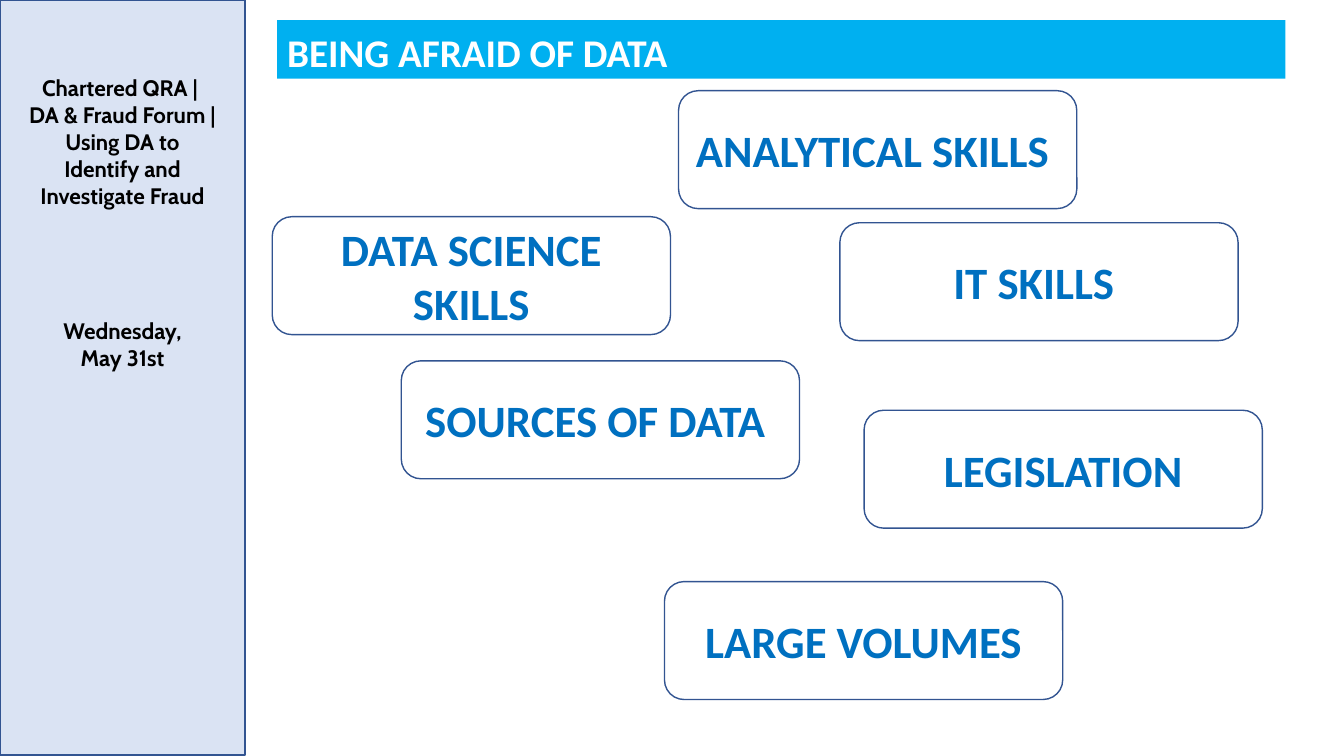
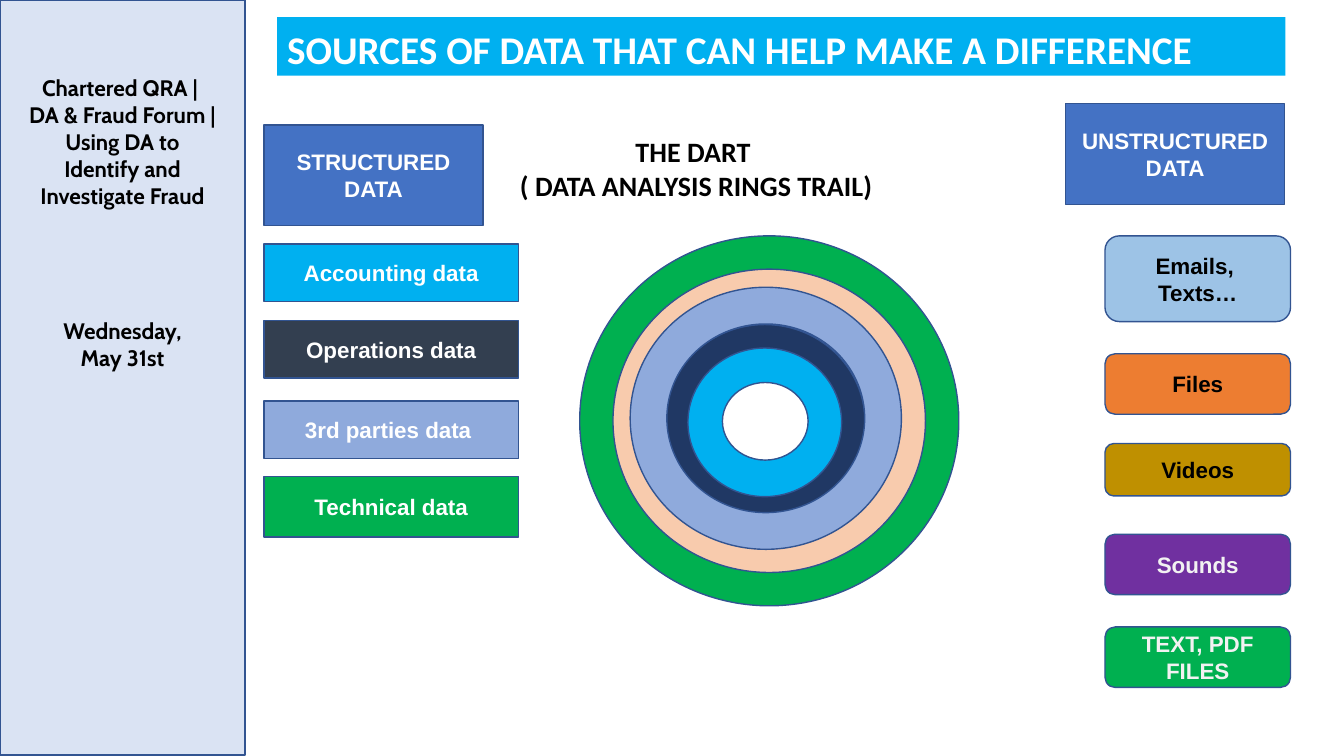
from pptx import Presentation
from pptx.dml.color import RGBColor
from pptx.enum.shapes import MSO_SHAPE
from pptx.enum.text import MSO_ANCHOR, PP_ALIGN
from pptx.util import Inches, Pt

WHITE, BLACK, PALE = "FFFFFF", "000000", "F2F2F2"
SKY, GREEN, BLUE = "00B0F0", "00B050", "4472C4"
EDGE, INK, BAR = "325491", "0070C0", "DAE3F3"
LABEL = ("Arial", 16, WHITE)
SIDE = ("Cabin", 16, BLACK)
SKILL = ("Calibri", 32, INK)
TITLE = ("Calibri", 28, WHITE)
HEAD = ("Calibri", 20, BLACK)

EVENT = ["Chartered QRA | ", "DA & Fraud Forum | Using DA to",
         " Identify and ", "Investigate Fraud"]
DATE = ["Wednesday,", "May 31st"]

# left, top, lines
SKILLS = [
    (8.33, 2.21, ["IT SKILLS "]),
    (2.7, 2.15, ["DATA SCIENCE", "SKILLS"]),
    (6.59, 5.77, ["LARGE VOLUMES"]),
    (8.57, 4.07, ["LEGISLATION"]),
    (3.98, 3.58, ["SOURCES OF DATA "]),
    (6.73, 0.9, ["ANALYTICAL SKILLS "]),
]

# left, top, text
GROUPS = [
    (2.62, 1.24, "STRUCTURED DATA"),
    (10.57, 1.03, "UNSTRUCTURED DATA"),
]

# top, height, fill, text
TABLES = [
    (2.42, 0.57, SKY, "Accounting data"),
    (3.18, 0.57, "333F50", "Operations data"),
    (3.98, 0.57, "8FAADC", "3rd parties data "),
    (4.73, 0.6, GREEN, "Technical data"),
]

# top, height, fill, text colour, lines
MEDIA = [
    (2.34, 0.85, "9DC3E6", BLACK, ["Emails, ", "Texts…"]),
    (3.51, 0.6, "ED7D31", BLACK, ["Files"]),
    (4.4, 0.52, "BF9000", BLACK, ["Videos"]),
    (5.3, 0.6, "7030A0", PALE, ["Sounds"]),
    (6.22, 0.6, GREEN, PALE, ["TEXT, PDF FILES"]),
]

# left, top, width, height, ring thickness, fill
RINGS = [
    (6.78, 3.41, 1.62, 1.54, 0.25, SKY),
    (6.05, 2.61, 3.15, 3.08, 0.09, "F8CBAD"),
    (6.59, 3.22, 1.99, 1.94, 0.12, "203864"),
    (5.75, 2.34, 3.76, 3.67, 0.09, GREEN),
    (6.25, 2.85, 2.69, 2.6, 0.14, "8FAADC"),
]


def rgb(code):
    return RGBColor.from_string(code)


def write(shape, lines, style, align=PP_ALIGN.CENTER, anchor=MSO_ANCHOR.MIDDLE):
    name, size, color = style
    frame = shape.text_frame
    frame.word_wrap = True
    frame.vertical_anchor = anchor
    frame.text = "\n".join(lines)
    for para in frame.paragraphs:
        para.alignment = align
        font = para.font
        font.name, font.size, font.bold = name, Pt(size), True
        font.color.rgb = rgb(color)


def block(slide, kind, box, fill, edge=EDGE):
    shape = slide.shapes.add_shape(kind, *map(Inches, box))
    shape.shadow.inherit = False
    shape.fill.solid()
    shape.fill.fore_color.rgb = rgb(fill)
    if edge:
        shape.line.color.rgb = rgb(edge)
        shape.line.width = Pt(1)
    else:
        shape.line.fill.background()
    return shape


def note(slide, box, lines, style):
    shape = slide.shapes.add_textbox(*map(Inches, box))
    write(shape, lines, style, anchor=MSO_ANCHOR.TOP)


def start(deck, title, top):
    """Add a slide with the side bar and the title band."""
    slide = deck.slides.add_slide(deck.slide_layouts[6])
    block(slide, MSO_SHAPE.RECTANGLE, (0, 0, 2.43, 7.49), BAR)
    note(slide, (0, 0.69, 2.43, 1.45), EVENT, SIDE)
    note(slide, (0, 3.1, 2.43, 0.64), DATE, SIDE)
    band = block(slide, MSO_SHAPE.RECTANGLE, (2.75, top, 10, 0.58), SKY, None)
    write(band, [title], TITLE, PP_ALIGN.JUSTIFY, MSO_ANCHOR.TOP)
    band.text_frame.paragraphs[0].line_spacing = 1.07
    return slide


def fears(deck):
    slide = start(deck, "BEING AFRAID OF DATA ", 0.2)
    for left, top, lines in SKILLS:
        box = (left, top, 3.95, 1.17)
        write(block(slide, MSO_SHAPE.ROUNDED_RECTANGLE, box, WHITE), lines, SKILL)


def sources(deck):
    slide = start(deck, "SOURCES OF DATA THAT CAN HELP MAKE A DIFFERENCE ", 0.17)
    for left, top, text in GROUPS:
        box = (left, top, 2.17, 1)
        write(block(slide, MSO_SHAPE.RECTANGLE, box, BLUE), [text], LABEL)
    for top, high, fill, text in TABLES:
        box = (2.62, top, 2.52, high)
        write(block(slide, MSO_SHAPE.RECTANGLE, box, fill), [text], LABEL)
    for *box, thick, fill in RINGS:
        block(slide, MSO_SHAPE.DONUT, box, fill).adjustments[0] = thick
    note(slide, (4.64, 1.29, 4.53, 0.77),
         ["THE DART ", "( DATA ANALYSIS RINGS TRAIL)"], HEAD)
    for top, high, fill, color, lines in MEDIA:
        box = (10.96, top, 1.84, high)
        shape = block(slide, MSO_SHAPE.ROUNDED_RECTANGLE, box, fill)
        write(shape, lines, ("Arial", 16, color))


def main():
    deck = Presentation()
    deck.slide_width, deck.slide_height = Inches(13.33), Inches(7.5)
    fears(deck)
    sources(deck)
    deck.save("out.pptx")


if __name__ == "__main__":
    main()
